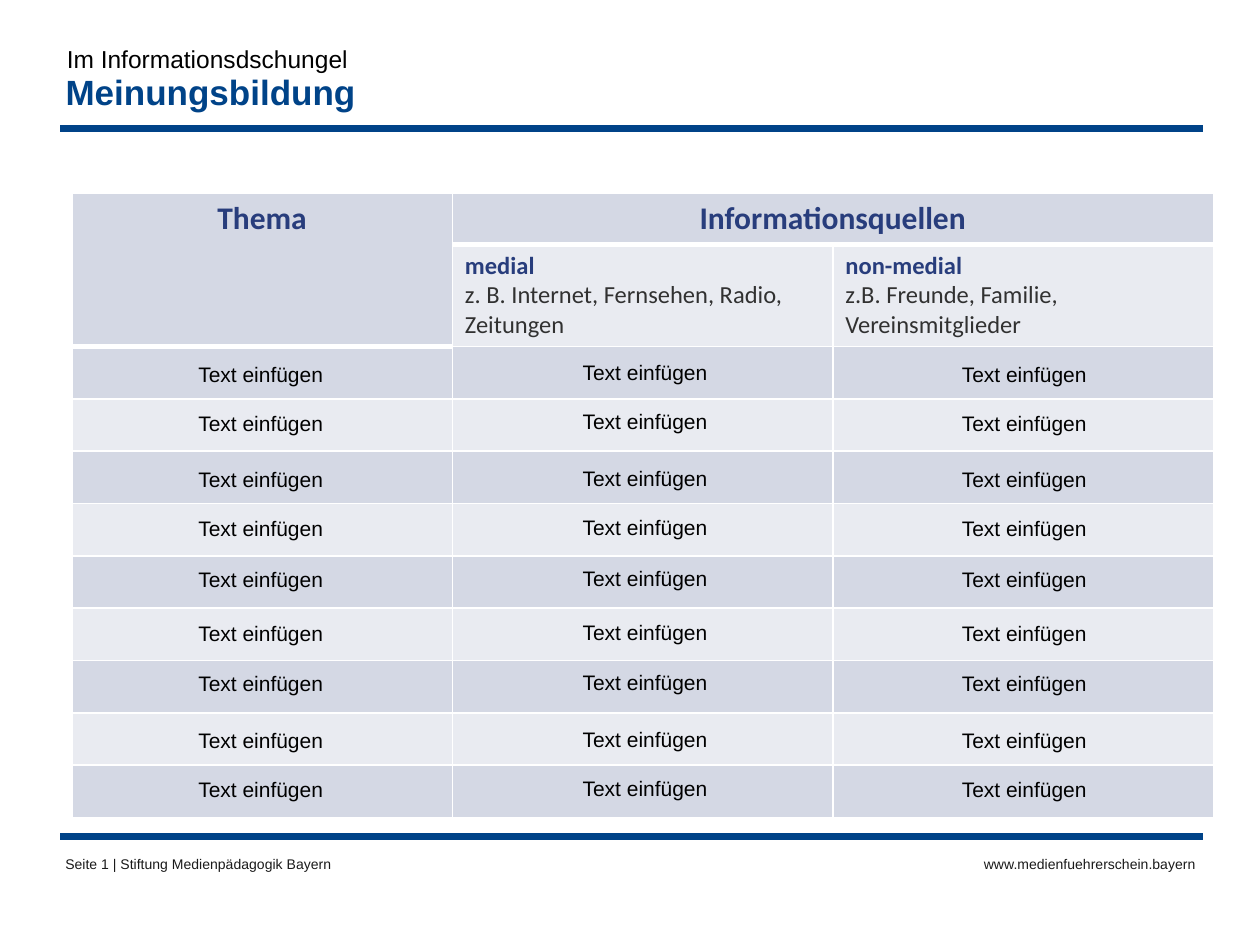
from lxml import etree
from pptx import Presentation
from pptx import util as u
from pptx.dml.color import RGBColor
from pptx.enum import shapes, text
from pptx.oxml.ns import qn

BLUE = RGBColor(0x00, 0x43, 0x88)
NAVY = RGBColor(0x28, 0x3D, 0x7C)
GREY = RGBColor(0x31, 0x31, 0x31)
FOOTER = RGBColor(0x1A, 0x1A, 0x1A)
BLACK = RGBColor(0, 0, 0)

LEFT = text.PP_ALIGN.LEFT
CENTER = text.PP_ALIGN.CENTER
RIGHT = text.PP_ALIGN.RIGHT
TOP = text.MSO_ANCHOR.TOP
MIDDLE = text.MSO_ANCHOR.MIDDLE
BOTTOM = text.MSO_ANCHOR.BOTTOM

TABLE_TOP = 1.53
TABLE_HEIGHT = 4.96
HEADER_HEIGHTS = [0.41, 0.81]
ENTRY_COUNT = 9
ENTRY_TOPS = [2.77, 3.16, 3.61, 4, 4.4, 4.83, 5.23, 5.68, 6.07]
ENTRY_COLUMNS = [(0.57, 0), (3.62, -0.01), (6.63, 0)]


def style_paragraph(paragraph, words, size, color, font="Arial", bold=False, align=LEFT):
    paragraph.text = words
    paragraph.alignment = align
    paragraph.font.name = font
    paragraph.font.size = u.Pt(size)
    paragraph.font.bold = bold
    paragraph.font.color.rgb = color


def set_frame(frame, anchor, side, vertical):
    frame.word_wrap = True
    frame.auto_size = text.MSO_AUTO_SIZE.NONE
    frame.vertical_anchor = anchor
    frame.margin_left = frame.margin_right = u.Inches(side)
    frame.margin_top = frame.margin_bottom = u.Inches(vertical)


def place(shape, left, top, width, height):
    shape.left, shape.top = u.Inches(left), u.Inches(top)
    shape.width, shape.height = u.Inches(width), u.Inches(height)


def fill_placeholder(shape, box, words, size, color, bold, anchor, side, vertical):
    place(shape, *box)
    set_frame(shape.text_frame, anchor, side, vertical)
    paragraph = shape.text_frame.paragraphs[0]
    properties = paragraph._p.get_or_add_pPr()
    properties.set("marL", "0")
    properties.set("indent", "0")
    etree.SubElement(properties, qn("a:buNone"))
    style_paragraph(paragraph, words, size, color, bold=bold)
    paragraph.line_spacing = u.Pt(23)
    paragraph.space_before = u.Pt(0)


def add_text(slide, box, words, size, color, align, anchor=TOP, side=0.1, vertical=0.05):
    shape = slide.shapes.add_textbox(*(u.Inches(length) for length in box))
    set_frame(shape.text_frame, anchor, side, vertical)
    style_paragraph(shape.text_frame.paragraphs[0], words, size, color, align=align)


def add_rule(slide, top):
    line = slide.shapes.add_connector(
        shapes.MSO_CONNECTOR.STRAIGHT,
        u.Inches(0.48), u.Inches(top), u.Inches(9.55), u.Inches(top))
    line.line.color.rgb = BLUE
    line.line.width = u.Pt(4)
    etree.SubElement(line._element.spPr, qn("a:effectLst"))


def format_cell(cell, opacity, heavy_edges):
    properties = cell._tc.get_or_add_tcPr()
    for edge in "LRTB":
        width = u.Pt(3 if edge in heavy_edges else 1)
        border = etree.SubElement(properties, qn("a:ln" + edge), w=str(int(width)))
        fill = etree.SubElement(border, qn("a:solidFill"))
        etree.SubElement(fill, qn("a:srgbClr"), val="FFFFFF")
    cell.fill.solid()
    cell.fill.fore_color.rgb = NAVY
    color = properties.find(qn("a:solidFill")).find(qn("a:srgbClr"))
    etree.SubElement(color, qn("a:alpha"), val=str(opacity * 1000))


def heavy_edges_at(row, column):
    if column == 0:
        return {0: "B", 1: "B", 2: "T"}.get(row, "")
    return {0: "B", 1: "T"}.get(row, "")


def add_source_table(slide):
    entry_height = (TABLE_HEIGHT - sum(HEADER_HEIGHTS)) / ENTRY_COUNT
    heights = HEADER_HEIGHTS + [entry_height] * ENTRY_COUNT
    table = slide.shapes.add_table(
        len(heights), 3, u.Inches(0.57), u.Inches(TABLE_TOP),
        u.Inches(9.06), u.Inches(TABLE_HEIGHT)).table
    table.first_row = table.horz_banding = False
    for row, height in enumerate(heights):
        table.rows[row].height = u.Inches(height)
        for column in range(3):
            dark = row % 2 == 0 or (row, column) == (1, 0)
            format_cell(table.cell(row, column), 20 if dark else 10,
                        heavy_edges_at(row, column))
    table.cell(0, 0).merge(table.cell(1, 0))
    table.cell(0, 1).merge(table.cell(0, 2))
    for column, heading in enumerate(["Thema", "Informationsquellen"]):
        style_paragraph(table.cell(0, column).text_frame.paragraphs[0],
                        heading, 18, NAVY, "Calibri", True, CENTER)
    kinds = [("medial", "z. B. Internet, Fernsehen, Radio, Zeitungen"),
             ("non-medial", "z.B. Freunde, Familie, Vereinsmitglieder")]
    for column, (kind, examples) in enumerate(kinds, start=1):
        frame = table.cell(1, column).text_frame
        style_paragraph(frame.paragraphs[0], kind, 14, NAVY, "Calibri", True)
        style_paragraph(frame.add_paragraph(), examples, 14, GREY, "Calibri")


def add_entries(slide):
    for left, shift in ENTRY_COLUMNS:
        for top in ENTRY_TOPS:
            add_text(slide, (left, top + shift, 3, 0.39), "Text einfügen",
                     12, BLACK, CENTER, MIDDLE, 0.04, 0.04)


def main():
    presentation = Presentation()
    presentation.slide_width = u.Inches(10)
    presentation.slide_height = u.Inches(7.5)
    slide = presentation.slides.add_slide(presentation.slide_layouts[1])
    fill_placeholder(slide.shapes.title, (0.42, 0.35, 9.2, 0.77),
                     "Meinungsbildung", 20, BLUE, True, MIDDLE, 0.1, 0.05)
    fill_placeholder(slide.placeholders[1], (0.42, 0.21, 3.96, 0.43),
                     "Im Informationsdschungel", 14, BLACK, False, BOTTOM, 0.11, 0.06)
    for top in (1.02, 6.64):
        add_rule(slide, top)
    add_text(slide, (7.26, 6.74, 2.33, 0.28), "www.medienfuehrerschein.bayern",
             8, FOOTER, RIGHT)
    add_text(slide, (0.42, 6.74, 2.81, 0.28),
             "Seite 1 | Stiftung Medienpädagogik Bayern", 8, FOOTER, LEFT)
    add_source_table(slide)
    add_entries(slide)
    presentation.save("out.pptx")


if __name__ == "__main__":
    main()
